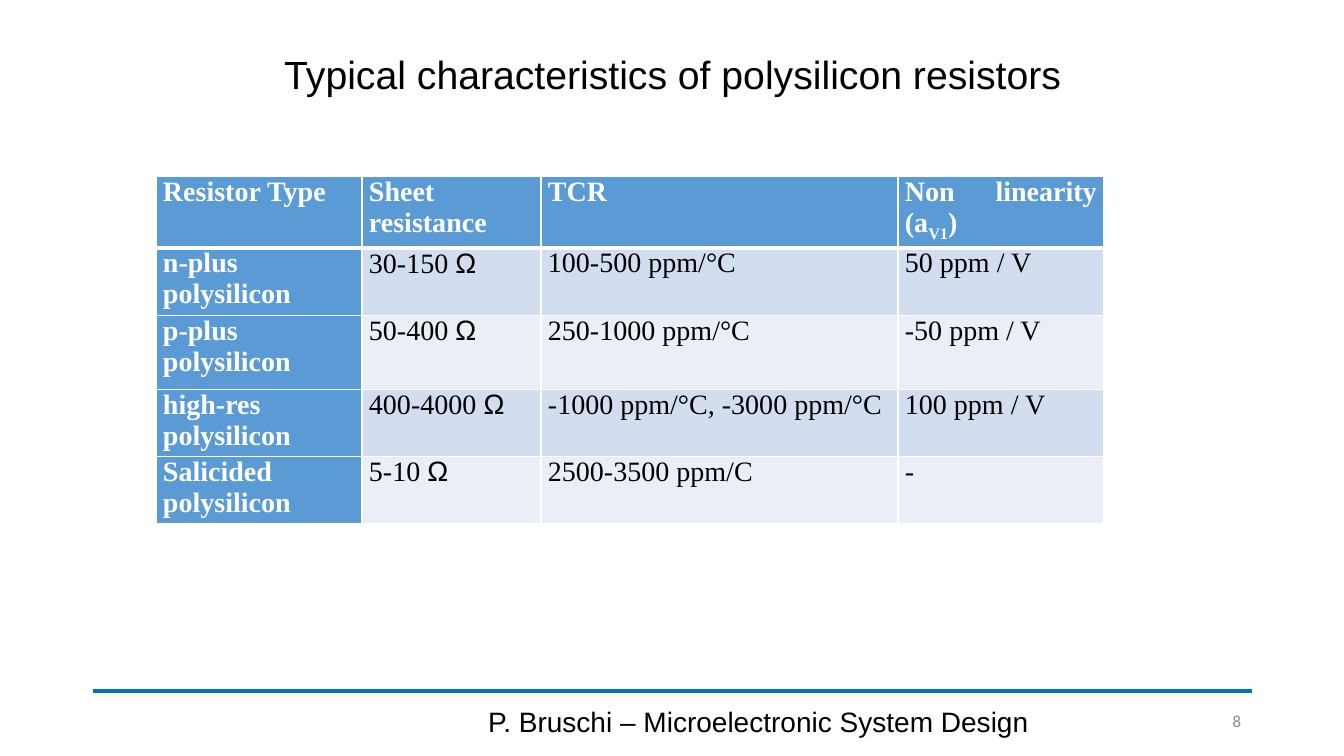
from lxml import etree
from pptx import Presentation
from pptx.dml.color import RGBColor
from pptx.enum.shapes import MSO_CONNECTOR
from pptx.enum.text import MSO_ANCHOR, PP_ALIGN
from pptx.oxml.ns import qn
from pptx.util import Pt

LINE = MSO_CONNECTOR.STRAIGHT
MIDDLE = MSO_ANCHOR.MIDDLE
LEFT, CENTER, RIGHT, JUSTIFY = PP_ALIGN.LEFT, PP_ALIGN.CENTER, PP_ALIGN.RIGHT, PP_ALIGN.JUSTIFY

# Content
COLORS = {"black": "000000", "white": "FFFFFF", "gray": "8C8C8C", "rule": "0070C0",
          "head": "5B9BD5", "odd": "D2DEEF", "even": "EAEFF7"}
TEXTS = [  # text, box in px, alignment, line spacing, font
    ("Typical characteristics of polysilicon resistors", (93, 40, 1159, 73), CENTER, 0.9,
     {"name": "Arial", "size": Pt(28), "color": "black"}),
    ("P. Bruschi – Microelectronic System Design", (445, 701, 627, 40), CENTER, 1.0,
     {"name": "Arial", "size": Pt(20), "color": "black"}),
    ("8", (1154, 701, 97, 40), RIGHT, 1.0,
     {"name": "Calibri", "size": Pt(12), "color": "gray"}),
]
HEADER = ["Resistor Type", "Sheet resistance ", "TCR ", "Non linearity (a_V1_)"]
ROWS = [
    ["n-plus polysilicon", "30-150 Ω", "100-500 ppm/°C", "50 ppm / V"],
    ["p-plus polysilicon", "50-400 Ω", "250-1000 ppm/°C", "-50 ppm / V"],
    ["high-res polysilicon", "400-4000 Ω", "-1000 ppm/°C, -3000 ppm/°C ", "100 ppm / V"],
    ["Salicided polysilicon", "5-10 Ω", "2500-3500 ppm/C", "-"],
]
TABLE_AT = (156, 176)
COL_WIDTHS = [206, 179, 357, 206]
ROW_HEIGHTS = [52, 52, 74, 52, 52]
RULE = (93, 691, 1252, 691)
CELL_FONT = {"name": "Times New Roman", "size": Pt(20)}


def px(n):
    return round(n * 914400 / 100.8)


def rgb(name):
    return RGBColor.from_string(COLORS[name])


def add_run(p, text, fmt):
    r = p.add_run()
    r.text = text
    for key, value in fmt.items():
        if key == "color":
            r.font.color.rgb = rgb(value)
        else:
            setattr(r.font, key, value)
    return r


def add_border(tcPr, side, points):
    ln = etree.SubElement(tcPr, qn("a:ln" + side), w=str(Pt(points)))
    fill = etree.SubElement(ln, qn("a:solidFill"))
    etree.SubElement(fill, qn("a:srgbClr"), val=COLORS["white"])


prs = Presentation()
prs.slide_width, prs.slide_height = px(1344), px(756)
slide = prs.slides.add_slide(prs.slide_layouts[6])

# Footer rule
rule = slide.shapes.add_connector(LINE, *map(px, RULE))
rule.line.color.rgb = rgb("rule")
rule.line.width = Pt(2.75)
etree.SubElement(rule._element.spPr, qn("a:effectLst"))

# Title, footer and page number
for text, box, align, spacing, fmt in TEXTS:
    tf = slide.shapes.add_textbox(*map(px, box)).text_frame
    tf.word_wrap = True
    tf.vertical_anchor = MIDDLE
    p = tf.paragraphs[0]
    p.alignment, p.line_spacing = align, spacing
    add_run(p, text, fmt)

# Resistor table
grid = [HEADER] + ROWS
size = (sum(COL_WIDTHS), sum(ROW_HEIGHTS))
table = slide.shapes.add_table(len(grid), len(HEADER), *map(px, TABLE_AT + size)).table
for col, width in zip(table.columns, COL_WIDTHS):
    col.width = px(width)
for row, height in zip(table.rows, ROW_HEIGHTS):
    row.height = px(height)

for i, values in enumerate(grid):
    for j, text in enumerate(values):
        cell = table.cell(i, j)
        is_head = i == 0 or j == 0
        cell.margin_left = cell.margin_right = px(7)
        cell.margin_top = cell.margin_bottom = 0
        tcPr = cell._tc.get_or_add_tcPr()
        for side, points in {"L": 1, "R": 1, "T": 3 if i == 1 else 1,
                             "B": 3 if i == 0 else 1}.items():
            add_border(tcPr, side, points)
        cell.fill.solid()
        cell.fill.fore_color.rgb = rgb("head" if is_head else "odd" if i % 2 else "even")

        p = cell.text_frame.paragraphs[0]
        p.alignment, p.space_after = JUSTIFY, Pt(6)
        fmt = {**CELL_FONT, "bold": is_head, "color": "white" if is_head else "black"}
        # Underscores enclose a subscript; the ohm sign is set in Arial
        for k, part in enumerate(text.split("_")):
            r = add_run(p, part.rstrip("Ω"), fmt)
            if k % 2:
                r._r.get_or_add_rPr().set("baseline", "-25000")
            if part.endswith("Ω"):
                add_run(p, "Ω", {**fmt, "name": "Arial"})

prs.save("out.pptx")
